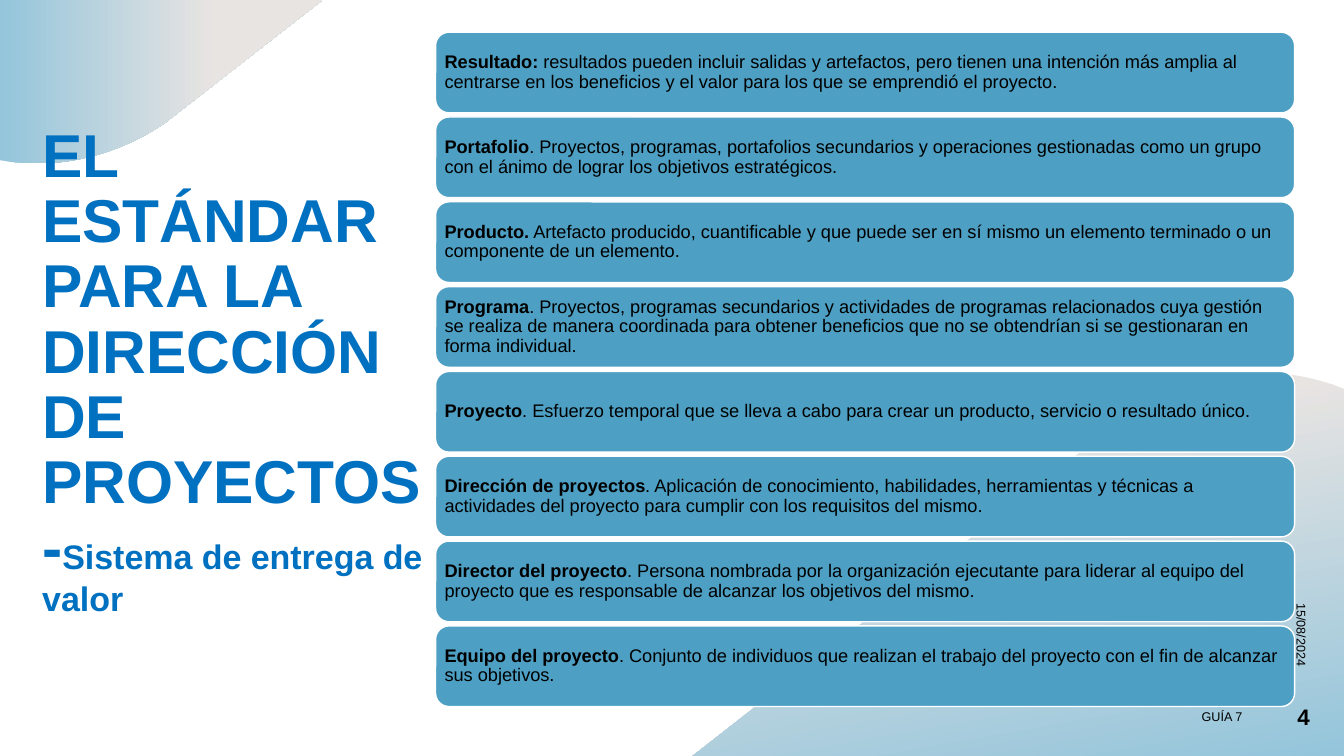
from pptx import Presentation
from pptx.dml.color import RGBColor as RGB
from pptx.enum.shapes import MSO_SHAPE as SHAPE
from pptx.enum.text import MSO_ANCHOR as ANCHOR, PP_ALIGN as ALIGN
from pptx.util import Inches, Pt

HUES = {"sand": "E8E4E2", "sky": "94C5DB", "card": "4D9FC3",
        "title": "0070C0", "ink": "000000", "white": "FFFFFF"}
TERMS = [
    ("Resultado:", " resultados pueden incluir salidas y artefactos, pero tienen una intención más amplia al centrarse en los beneficios y el valor para los que se emprendió el proyecto."),
    ("Portafolio", ". Proyectos, programas, portafolios secundarios y operaciones gestionadas como un grupo con el ánimo de lograr los objetivos estratégicos."),
    ("Producto.", " Artefacto producido, cuantificable y que puede ser en sí mismo un elemento terminado o un componente de un elemento."),
    ("Programa", ". Proyectos, programas secundarios y actividades de programas relacionados cuya gestión se realiza de manera coordinada para obtener beneficios que no se obtendrían si se gestionaran en forma individual."),
    ("Proyecto", ". Esfuerzo temporal que se lleva a cabo para crear un producto, servicio o resultado único."),
    ("Dirección de proyectos", ". Aplicación de conocimiento, habilidades, herramientas y técnicas a actividades del proyecto para cumplir con los requisitos del mismo."),
    ("Director del proyecto", ". Persona nombrada por la organización ejecutante para liderar al equipo del proyecto que es responsable de alcanzar los objetivos del mismo."),
    ("Equipo del proyecto", ". Conjunto de individuos que realizan el trabajo del proyecto con el fin de alcanzar sus objetivos."),
]
TOP = [(0, 0), (3.2, 0), (1.7, 1.17), (1.65, 1.21),
       (1.29, 1.46, 0.88, 1.6, 0.46, 1.62),
       (0.42, 1.62, 0.37, 1.62, 0.33, 1.62),
       (0.27, 1.62, 0.21, 1.61, 0.15, 1.61), (0, 1.59)]
BASE = [(5.66, 0), (5.9, 0, 6.13, 0.04, 6.36, 0.12), (6.46, 0.16),
        (6.46, 3.8), (0, 3.8), (4.29, 0.44), (4.33, 0.4),
        (4.7, 0.15, 5.11, 0.01, 5.53, 0), (5.57, 0, 5.61, -0.01, 5.66, 0)]


def hue(name):
    return RGB.from_string(HUES[name])


def style(font, size, name="ink", bold=False):
    font.name = "Arial"
    font.size = Pt(size)
    font.bold = bold
    font.color.rgb = hue(name)


def trace(steps, count=16):
    dots = []
    for step in steps:
        if len(step) == 2:
            dots.append(step)
            continue
        ends = [dots[-1], step[:2], step[2:4], step[4:]]
        for i in range(1, count + 1):
            t = i / count
            parts = ((1 - t) ** 3, 3 * t * (1 - t) ** 2,
                     3 * t * t * (1 - t), t ** 3)
            dots.append(tuple(sum(p * end[axis] for p, end in zip(parts, ends))
                              for axis in (0, 1)))
    return dots


def wave(slide, left, top, steps, stops, angle):
    dots = [(Inches(left + x), Inches(top + y)) for x, y in trace(steps)]
    pen = slide.shapes.build_freeform(*dots[0])
    pen.add_line_segments(dots[1:])
    shape = pen.convert_to_shape()
    shape.shadow.inherit = False
    shape.line.fill.background()
    shape.fill.gradient()
    shape.fill.gradient_angle = angle
    for stop, (place, name) in zip(shape.fill.gradient_stops, stops):
        stop.position = place
        stop.color.rgb = hue(name)


def text_box(slide, left, top, width, height, anchor):
    box = slide.shapes.add_textbox(*map(Inches, (left, top, width, height)))
    box.text_frame.word_wrap = True
    box.text_frame.vertical_anchor = anchor
    return box


def title(slide, left, top, width, height):
    box = text_box(slide, left, top, width, height, ANCHOR.BOTTOM)
    para = box.text_frame.paragraphs[0]
    para.line_spacing = 0.9
    style(para.font, 43.2, "title", True)
    para.add_run().text = "EL ESTÁNDAR PARA LA DIRECCIÓN DE PROYECTOS"
    para.add_line_break()
    para.add_run().text = "-"
    sub = para.add_run()
    sub.text = "Sistema de entrega de valor"
    sub.font.size = Pt(24.3)


def cards(slide, left, top, width, height, tall=0.8):
    pitch = (height - tall) / (len(TERMS) - 1)
    for i, (term, text) in enumerate(TERMS):
        card = slide.shapes.add_shape(
            SHAPE.ROUNDED_RECTANGLE,
            *map(Inches, (left, top + i * pitch, width, tall)))
        card.shadow.inherit = False
        card.fill.solid()
        card.fill.fore_color.rgb = hue("card")
        card.line.color.rgb = hue("white")
        card.line.width = Pt(1)
        frame = card.text_frame
        frame.word_wrap = True
        frame.vertical_anchor = ANCHOR.MIDDLE
        frame.margin_left = frame.margin_right = Inches(0.05)
        frame.margin_top = frame.margin_bottom = Inches(0.05)
        para = frame.paragraphs[0]
        para.alignment = ALIGN.LEFT
        para.line_spacing = 0.9
        style(para.font, 13)
        head = para.add_run()
        head.text = term
        head.font.bold = True
        para.add_run().text = text


def note(slide, left, top, width, text, size=9, bold=False, turn=0):
    box = text_box(slide, left, top, width, 0.4, ANCHOR.MIDDLE)
    box.rotation = turn
    para = box.text_frame.paragraphs[0]
    para.text = text
    para.alignment = ALIGN.RIGHT
    style(para.font, size, bold=bold)


def footer(slide, left, top):
    note(slide, left + 2.04, top - 1.85, 2.9, "15/08/2024", turn=90)
    note(slide, left, top, 3, "GUÍA 7")
    note(slide, left + 3, top, 0.67, "4", 16, True)


def main():
    deck = Presentation()
    deck.slide_width = Inches(13.33)
    deck.slide_height = Inches(7.5)
    slide = deck.slides.add_slide(deck.slide_layouts[6])
    wave(slide, 6.87, 3.7, BASE, [(0.23, "sand"), (1, "sky")], 280)
    wave(slide, 0, 0, TOP, [(0, "sky"), (0.67, "sand")], 0)
    title(slide, 0.32, 2.89, 4.1, 3.3)
    cards(slide, 4.32, 0.32, 8.52, 6.69)
    footer(slide, 9.42, 6.91)
    deck.save("out.pptx")


if __name__ == "__main__":
    main()
